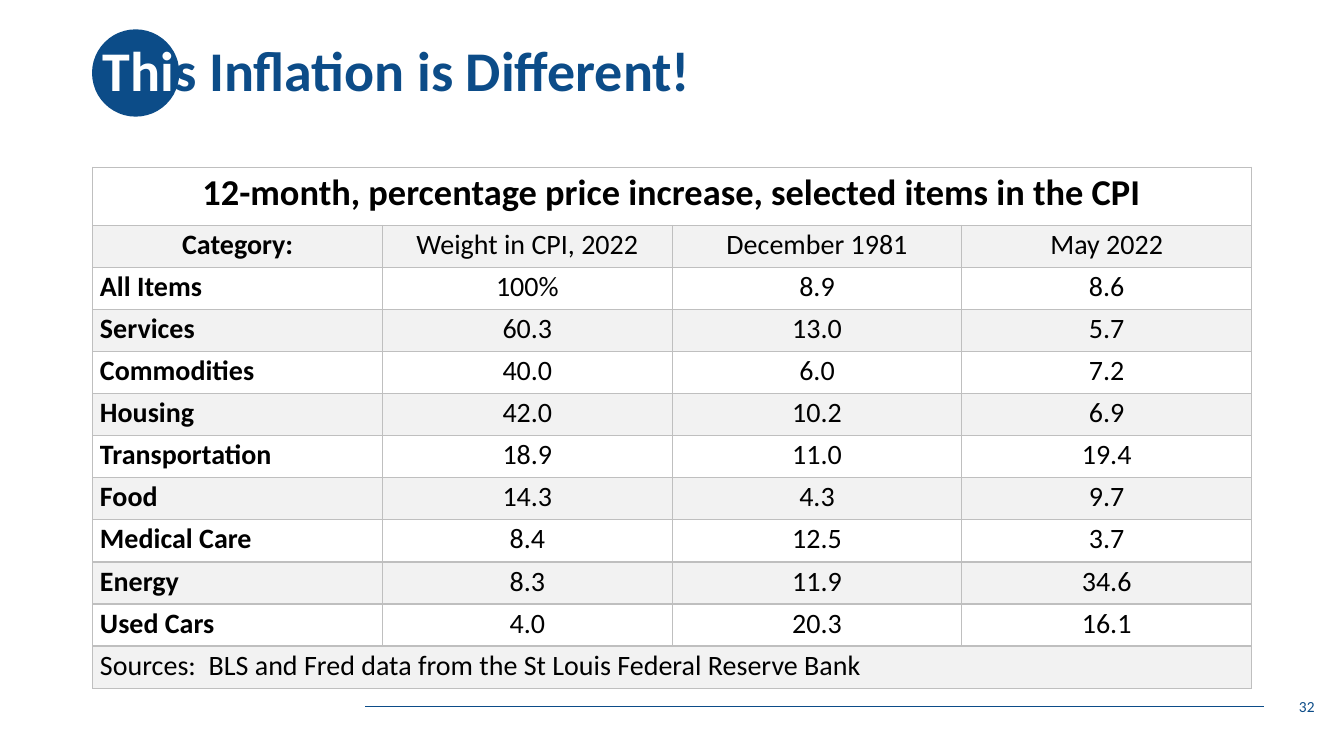
from dataclasses import dataclass

from lxml import etree
from pptx import Presentation
from pptx.dml.color import RGBColor
from pptx.enum.shapes import MSO_CONNECTOR, MSO_SHAPE
from pptx.enum.text import MSO_ANCHOR, PP_ALIGN
from pptx.oxml.ns import qn
from pptx.util import Cm, Pt

LEFT, CENTER, RIGHT = PP_ALIGN.LEFT, PP_ALIGN.CENTER, PP_ALIGN.RIGHT
TOP, MIDDLE = MSO_ANCHOR.TOP, MSO_ANCHOR.MIDDLE
ELLIPSE, STRAIGHT = MSO_SHAPE.OVAL, MSO_CONNECTOR.STRAIGHT


@dataclass(frozen=True)
class Theme:
    """Colours and type sizes of the slide."""

    font: str = "Calibri"
    blue: str = "0C4C88"
    white: str = "FFFFFF"
    black: str = "000000"
    band: str = "F2F2F2"
    grid: str = "BFBFBF"
    title: int = 40
    heading: int = 26
    body: int = 20
    number: int = 11


THEME = Theme()

HEADING = "12-month, percentage price increase, selected items in the CPI"
COLUMNS = ("Category:", "Weight in CPI, 2022", "December 1981", "May 2022")
PRICES = (
    ("All Items", "100%", "8.9", "8.6"),
    ("Services", "60.3", "13.0", "5.7"),
    ("Commodities", "40.0", "6.0", "7.2"),
    ("Housing", "42.0", "10.2", "6.9"),
    ("Transportation", "18.9", "11.0", "19.4"),
    ("Food", "14.3", "4.3", "9.7"),
    ("Medical Care", "8.4", "12.5", "3.7"),
    ("Energy", "8.3", "11.9", "34.6"),
    ("Used Cars", "4.0", "20.3", "16.1"),
)
SOURCES = "Sources:  BLS and Fred data from the St Louis Federal Reserve Bank"


def add_text(p, text, size, color, bold=False, align=LEFT, spacing=1.0):
    """Append a formatted run to a paragraph."""
    p.alignment = align
    p.line_spacing = spacing
    r = p.add_run()
    r.text = text
    r.font.name = THEME.font
    r.font.size = Pt(size)
    r.font.bold = bold
    r.font.color.rgb = RGBColor.from_string(color)


class SlideBuilder:
    """Draw themed elements on the current slide."""

    def __init__(self, slide, theme):
        self.shapes = slide.shapes
        self.theme = theme

    def line(self, x1, y1, x2, y2):
        """Draw a thin rule."""
        ln = self.shapes.add_connector(STRAIGHT, Cm(x1), Cm(y1), Cm(x2), Cm(y2))
        ln.line.color.rgb = RGBColor.from_string(self.theme.blue)
        ln.line.width = Pt(0.5)
        etree.SubElement(ln._element.spPr, qn("a:effectLst"))

    def circle(self, x, y, size):
        """Draw a filled circle without outline."""
        sp = self.shapes.add_shape(ELLIPSE, Cm(x), Cm(y), Cm(size), Cm(size))
        sp.shadow.inherit = False
        sp.fill.solid()
        sp.fill.fore_color.rgb = RGBColor.from_string(self.theme.blue)
        sp.line.fill.background()

    def text(self, x, y, w, h, parts, **fmt):
        """Add a one-paragraph text box made of (text, colour) parts."""
        tf = self.shapes.add_textbox(Cm(x), Cm(y), Cm(w), Cm(h)).text_frame
        tf.word_wrap = True
        tf.vertical_anchor = MIDDLE
        for text, color in parts:
            add_text(tf.paragraphs[0], text, color=color, **fmt)

    def borders(self, cell):
        """Give a cell a thin line on every side."""
        tc_pr = cell._tc.get_or_add_tcPr()
        for side in "LRTB":
            ln = etree.SubElement(tc_pr, qn(f"a:ln{side}"), w=str(Pt(1)))
            fill = etree.SubElement(ln, qn("a:solidFill"))
            etree.SubElement(fill, qn("a:srgbClr"), val=self.theme.grid)

    def cell(self, cell, text, banded, **fmt):
        """Fill, frame and label one table cell."""
        self.borders(cell)
        if banded:
            cell.fill.solid()
            cell.fill.fore_color.rgb = RGBColor.from_string(self.theme.band)
        else:
            cell.fill.background()
        cell.margin_left = cell.margin_right = Cm(0.18)
        cell.margin_top = cell.margin_bottom = 0
        cell.vertical_anchor = TOP
        p = cell.text_frame.paragraphs[0]
        add_text(p, text, color=self.theme.black, spacing=1.07, **fmt)

    def table(self, x, y, col_w, head_h, row_h, heading, columns, rows, sources):
        """Add a banded table with a merged heading and a merged source row."""
        n_cols = len(columns)
        grid = [(heading,), columns, *rows, (sources,)]
        last = len(grid) - 1
        heights = [head_h] + [row_h] * last
        table = self.shapes.add_table(
            len(grid), n_cols, Cm(x), Cm(y), Cm(col_w * n_cols), Cm(sum(heights))
        ).table
        table.first_row = table.horz_banding = False
        for column in table.columns:
            column.width = Cm(col_w)
        for i, values in enumerate(grid):
            table.rows[i].height = Cm(heights[i])
            for j, text in enumerate(values):
                self.cell(
                    table.cell(i, j), text, banded=i % 2 == 1,
                    size=self.theme.body if i else self.theme.heading,
                    bold=j == 0 and i < last,
                    align=CENTER if i < 2 or j else LEFT,
                )
            if len(values) == 1:
                for j in range(1, n_cols):
                    self.borders(table.cell(i, j))
                table.cell(i, 0).merge(table.cell(i, n_cols - 1))


def main():
    """Build and save the inflation slide."""
    prs = Presentation()
    prs.slide_width, prs.slide_height = Cm(33.87), Cm(19.05)
    s = SlideBuilder(prs.slides.add_slide(prs.slide_layouts[6]), THEME)
    s.line(9.2, 17.8, 31.85, 17.8)
    s.circle(2.32, 0.74, 2.2)
    s.text(
        2.34, 0, 29.2, 3.68,
        [("Thi", THEME.white), ("s Inflation is Different!", THEME.blue)],
        size=THEME.title, bold=True, spacing=0.9,
    )
    s.table(2.34, 4.22, 7.3, 1.46, 1.06, HEADING, COLUMNS, PRICES, SOURCES)
    s.text(
        25.76, 17.3, 7.62, 1.02, [("32", THEME.blue)],
        size=THEME.number, align=RIGHT,
    )
    prs.save("out.pptx")


if __name__ == "__main__":
    main()
